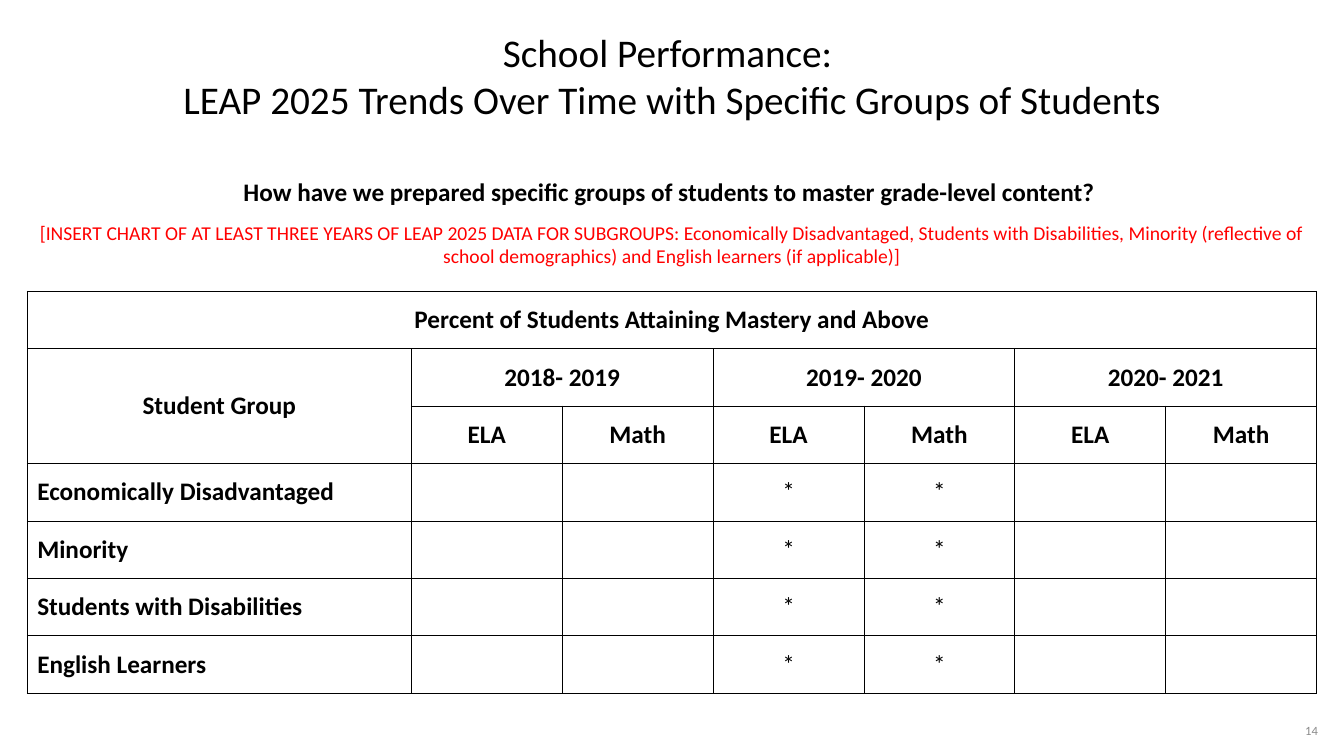
from typing import NamedTuple

from lxml.etree import SubElement
from pptx import Presentation
from pptx.dml.color import RGBColor
from pptx.enum.text import MSO_ANCHOR, MSO_AUTO_SIZE, PP_ALIGN
from pptx.oxml.ns import qn
from pptx.util import Inches, Pt

BLACK = RGBColor(0x00, 0x00, 0x00)
RED = RGBColor(0xFF, 0x00, 0x00)
GRAY = RGBColor(0x8A, 0x8A, 0x8A)
FONT = "Calibri"

# Grid of the slide and its table, in inches
SLIDE_WIDTH, SLIDE_HEIGHT = 13.33, 7.5
MARGIN = 0.27
CONTENT_WIDTH = SLIDE_WIDTH - 2 * MARGIN
TABLE_TOP = 2.89
ROW_HEIGHT = 0.57
GROUP_WIDTH = 3.81

YEARS = ["2018- 2019", "2019- 2020", "2020- 2021"]
SUBJECTS = ["ELA", "Math"]
GROUPS = ["Economically Disadvantaged", "Minority",
          "Students with Disabilities", "English Learners"]
STARRED_YEAR = "2019- 2020"
HEADER_ROWS = 3
SCORE_COLUMNS = len(YEARS) * len(SUBJECTS)
SCORE_WIDTH = (CONTENT_WIDTH - GROUP_WIDTH) / SCORE_COLUMNS


class Box(NamedTuple):
    left: float
    top: float
    width: float
    height: float


class Style(NamedTuple):
    size: float
    color: RGBColor = BLACK
    bold: bool = False
    align: PP_ALIGN = PP_ALIGN.CENTER
    space_before: float = 0


class Entry(NamedTuple):
    row: int
    column: int
    text: str
    style: Style
    row_span: int = 1
    column_span: int = 1


HEADING = Style(18, bold=True)
GROUP_NAME = Style(18, bold=True, align=PP_ALIGN.LEFT)
SCORE = Style(18)


def format_paragraph(paragraph, style: Style) -> None:
    paragraph.alignment = style.align
    paragraph.space_before = Pt(style.space_before)
    font = paragraph.font
    font.name, font.size, font.bold = FONT, Pt(style.size), style.bold
    font.color.rgb = style.color


def place(shape, box: Box, anchor: MSO_ANCHOR, inset: float) -> None:
    shape.left, shape.top, shape.width, shape.height = map(Inches, box)
    frame = shape.text_frame
    frame.word_wrap = True
    frame.auto_size = MSO_AUTO_SIZE.NONE
    frame.vertical_anchor = anchor
    frame.margin_left = frame.margin_right = Inches(0.1)
    frame.margin_top = frame.margin_bottom = Inches(inset)


def add_text(slide, box: Box, lines: list[tuple[str, Style]],
             anchor: MSO_ANCHOR, inset: float) -> None:
    shape = slide.shapes.add_textbox(*map(Inches, box))
    place(shape, box, anchor, inset)
    frame = shape.text_frame
    for index, (text, style) in enumerate(lines):
        paragraph = frame.add_paragraph() if index else frame.paragraphs[0]
        paragraph.text = text
        format_paragraph(paragraph, style)


def add_borders(cell) -> None:
    properties = cell._tc.get_or_add_tcPr()
    for position, side in enumerate(("lnL", "lnR", "lnT", "lnB")):
        line = SubElement(properties, qn(f"a:{side}"), w=str(Pt(0.75)))
        fill = SubElement(line, qn("a:solidFill"))
        SubElement(fill, qn("a:srgbClr"), val=str(BLACK))
        properties.insert(position, line)


def table_entries() -> list[Entry]:
    entries = [
        Entry(0, 0, "Percent of Students Attaining Mastery and Above",
              HEADING, column_span=1 + SCORE_COLUMNS),
        Entry(1, 0, "Student Group", HEADING, row_span=2),
    ]
    for year_index, year in enumerate(YEARS):
        first = 1 + year_index * len(SUBJECTS)
        entries.append(Entry(1, first, year, HEADING,
                             column_span=len(SUBJECTS)))
        for column, subject in enumerate(SUBJECTS, first):
            entries.append(Entry(2, column, subject, HEADING))
            if year == STARRED_YEAR:
                entries += [Entry(HEADER_ROWS + index, column, "*", SCORE)
                            for index in range(len(GROUPS))]
    entries += [Entry(row, 0, group, GROUP_NAME)
                for row, group in enumerate(GROUPS, HEADER_ROWS)]
    return entries


def add_score_table(slide) -> None:
    row_count = HEADER_ROWS + len(GROUPS)
    box = Box(MARGIN, TABLE_TOP, CONTENT_WIDTH, row_count * ROW_HEIGHT)
    table = slide.shapes.add_table(row_count, 1 + SCORE_COLUMNS,
                                   *map(Inches, box)).table
    table.first_row = table.horz_banding = False
    for index, column in enumerate(table.columns):
        column.width = Inches(SCORE_WIDTH if index else GROUP_WIDTH)
    for row in table.rows:
        row.height = Inches(ROW_HEIGHT)
    for cell in table.iter_cells():
        cell.fill.background()
        add_borders(cell)
        cell.vertical_anchor = MSO_ANCHOR.MIDDLE
        cell.margin_left = cell.margin_right = Inches(0.1)
        cell.margin_top = cell.margin_bottom = Inches(0.13)
    for entry in table_entries():
        cell = table.cell(entry.row, entry.column)
        if entry.row_span > 1 or entry.column_span > 1:
            cell.merge(table.cell(entry.row + entry.row_span - 1,
                                  entry.column + entry.column_span - 1))
        cell.text = entry.text
        format_paragraph(cell.text_frame.paragraphs[0], entry.style)


def main() -> None:
    presentation = Presentation()
    presentation.slide_width = Inches(SLIDE_WIDTH)
    presentation.slide_height = Inches(SLIDE_HEIGHT)
    slide = presentation.slides.add_slide(presentation.slide_layouts[5])

    # Title
    title = slide.shapes.title
    place(title, Box(0, -0.02, SLIDE_WIDTH, 1.53), MSO_ANCHOR.MIDDLE, 0.1)
    paragraph = title.text_frame.paragraphs[0]
    paragraph.add_run().text = "School Performance: "
    paragraph.add_line_break()
    paragraph.add_run().text = (
        "LEAP 2025 Trends Over Time with Specific Groups of Students")
    format_paragraph(paragraph, Style(28))

    # Question and instruction
    add_text(slide, Box(MARGIN, 1.65, CONTENT_WIDTH, 1.2), [
        ("How have we prepared specific groups of students to master "
         "grade-level content? ", HEADING),
        ("[INSERT CHART OF AT LEAST THREE YEARS OF LEAP 2025 DATA FOR "
         "SUBGROUPS: Economically Disadvantaged, Students with Disabilities, "
         "Minority (reflective of school demographics) and English learners "
         "(if applicable)]", Style(14, RED, space_before=10)),
    ], MSO_ANCHOR.TOP, 0.1)

    # Scores by student group
    add_score_table(slide)

    # Page number
    add_text(slide, Box(9.92, 7, 3.25, 0.5),
             [("14", Style(9, GRAY, align=PP_ALIGN.RIGHT))],
             MSO_ANCHOR.MIDDLE, 0.05)

    presentation.save("out.pptx")


if __name__ == "__main__":
    main()
